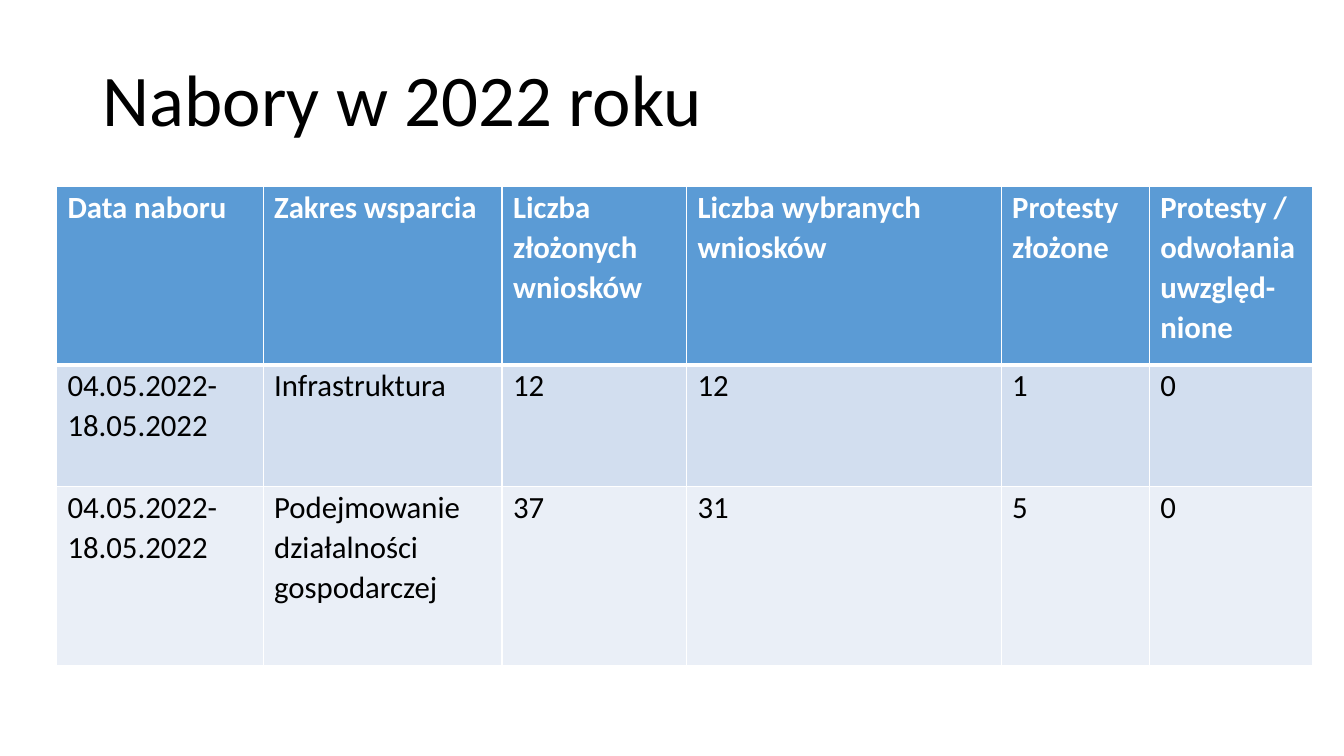
from lxml import etree
from pptx import Presentation
from pptx import util as u
from pptx.dml.color import RGBColor
from pptx.enum import text
from pptx.oxml import ns

PX = 9144
FONT = "Calibri"
HEX = {"head": "5B9BD5", "odd": "D2DEEF", "even": "EAEFF7",
       "light": "FFFFFF", "dark": "000000"}
TITLE = "Nabory w 2022 roku"
ROWS = [
    ("Data naboru", "Zakres wsparcia", "Liczba złożonych wniosków",
     "Liczba wybranych wniosków", "Protesty złożone",
     "Protesty / odwołania uwzględ-nione"),
    ("04.05.2022-18.05.2022", "Infrastruktura", "12", "12", "1", "0"),
    ("04.05.2022-18.05.2022", "Podejmowanie działalności gospodarczej",
     "37", "31", "5", "0"),
]
WIDTHS = [205, 237, 183, 312, 147, 162]
HEIGHTS = [177, 121, 177]
FILLS = ["head", "odd", "even"]


def px(*vals):
    return [u.Emu(v * PX) for v in vals]


def style(para, size, color, bold=False):
    para.font.name = FONT
    para.font.size = u.Pt(size)
    para.font.bold = bold
    para.font.color.rgb = RGBColor.from_string(HEX[color])


def border(cell, side, width):
    line = etree.SubElement(cell._tc.get_or_add_tcPr(), ns.qn("a:ln" + side),
                            w=str(u.Pt(width)))
    fill = etree.SubElement(line, ns.qn("a:solidFill"))
    etree.SubElement(fill, ns.qn("a:srgbClr"), val=HEX["light"])


def fill_cell(cell, words, row):
    cell.margin_left, cell.margin_right = px(11, 11)
    cell.margin_top = cell.margin_bottom = 0
    cell.text = words
    para = cell.text_frame.paragraphs[0]
    para.line_spacing = 1.07
    para.space_after = u.Pt(8)
    style(para, 22, "dark" if row else "light", row == 0)
    for side in "LRTB":
        thick = (row, side) in ((0, "B"), (1, "T"))
        border(cell, side, 3 if thick else 1)
    cell.fill.solid()
    cell.fill.fore_color.rgb = RGBColor.from_string(HEX[FILLS[row]])


def main():
    deck = Presentation()
    deck.slide_width, deck.slide_height = px(1333, 750)
    slide = deck.slides.add_slide(deck.slide_layouts[5])

    title = slide.shapes.title
    title.left, title.top, title.width, title.height = px(92, 20, 1150, 165)
    title.text = TITLE
    title.text_frame.vertical_anchor = text.MSO_ANCHOR.MIDDLE
    head = title.text_frame.paragraphs[0]
    head.alignment = text.PP_ALIGN.LEFT
    head.line_spacing = 0.9
    style(head, 52, "dark")

    box = px(56, 185, sum(WIDTHS), sum(HEIGHTS))
    table = slide.shapes.add_table(len(ROWS), len(WIDTHS), *box).table
    for col, width in zip(table.columns, px(*WIDTHS)):
        col.width = width
    for row, height in zip(table.rows, px(*HEIGHTS)):
        row.height = height
    for r, line in enumerate(ROWS):
        for c, words in enumerate(line):
            fill_cell(table.cell(r, c), words, r)

    deck.save("out.pptx")


if __name__ == "__main__":
    main()
